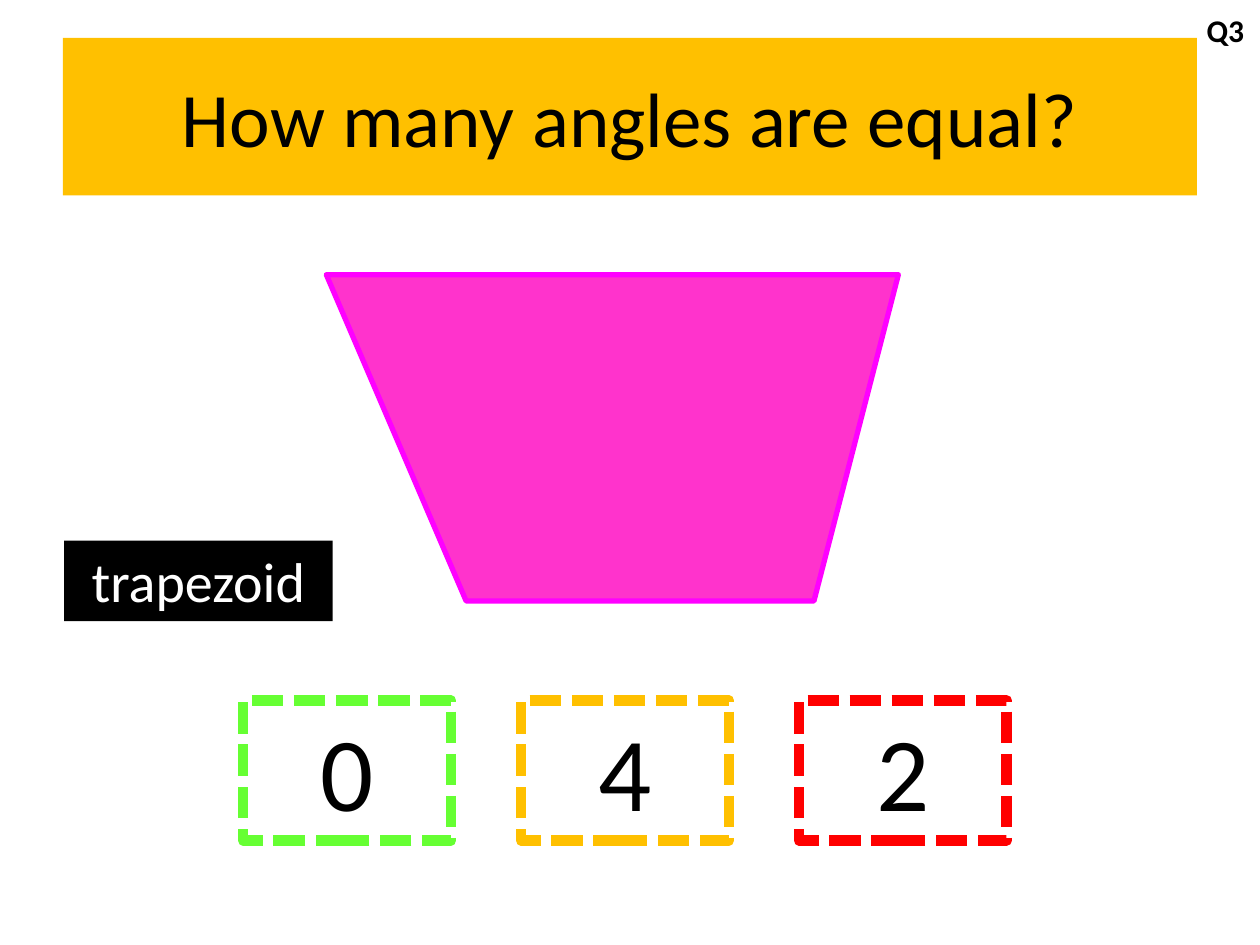
from pptx import Presentation
from pptx.dml.color import RGBColor
from pptx.enum.dml import MSO_LINE
from pptx.enum.shapes import MSO_SHAPE
from pptx.enum.text import MSO_ANCHOR, PP_ALIGN
from pptx.util import Inches, Pt

COLORS = {
    "black": "000000",
    "white": "FFFFFF",
    "amber": "FFC000",
    "pink": "FF33CC",
    "magenta": "FF00FF",
    "green": "66FF33",
    "red": "FF0000",
}


class QuizPage:
    font = "Calibri"
    unit = Inches(0.1)

    def __init__(self, deck):
        self.page = deck.slides.add_slide(deck.slide_layouts[6])

    def grid(self, *cells):
        return [round(cell * self.unit) for cell in cells]

    def color(self, name):
        return RGBColor.from_string(COLORS[name])

    def style(self, shape, fill=None, line=None, width=0, dash=None):
        shape.shadow.inherit = False
        if fill:
            shape.fill.solid()
            shape.fill.fore_color.rgb = self.color(fill)
        else:
            shape.fill.background()
        if line:
            shape.line.color.rgb = self.color(line)
            shape.line.width = Pt(width)
            shape.line.dash_style = dash
        else:
            shape.line.fill.background()

    def set_text(self, shape, text, size, color="black", bold=False, anchor=MSO_ANCHOR.TOP):
        frame = shape.text_frame
        frame.word_wrap = True
        frame.vertical_anchor = anchor
        para = frame.paragraphs[0]
        para.text = text
        para.alignment = PP_ALIGN.CENTER
        para.font.name = self.font
        para.font.size = Pt(size)
        para.font.bold = bold
        para.font.color.rgb = self.color(color)

    def label(self, area, text, size, **options):
        box = self.page.shapes.add_textbox(*self.grid(*area))
        self.set_text(box, text, size, **options)

    def panel(self, area, text, size, fill, **options):
        box = self.page.shapes.add_shape(MSO_SHAPE.RECTANGLE, *self.grid(*area))
        self.style(box, fill=fill)
        self.set_text(box, text, size, **options)

    def answer(self, area, text, line):
        box = self.page.shapes.add_shape(MSO_SHAPE.RECTANGLE, *self.grid(*area))
        self.style(box, line=line, width=6, dash=MSO_LINE.SQUARE_DOT)
        self.set_text(box, text, 60)

    def polygon(self, corners, fill, line):
        start, *others = [self.grid(*corner) for corner in corners]
        builder = self.page.shapes.build_freeform(*start)
        builder.add_line_segments(others, close=True)
        self.style(builder.convert_to_shape(), fill=fill, line=line, width=3)


def main():
    deck = Presentation()
    deck.slide_width = Inches(10)
    deck.slide_height = Inches(7.5)
    quiz = QuizPage(deck)

    quiz.panel((5, 3, 90, 12.5), "How many angles are equal?", 44, "amber",
               anchor=MSO_ANCHOR.MIDDLE)
    quiz.polygon([(71.3, 21.8), (25.9, 21.8), (37, 47.7), (64.6, 47.7)],
                 "pink", "magenta")
    answers = [("0", "green"), ("4", "amber"), ("2", "red")]
    for column, (text, line) in enumerate(answers):
        quiz.answer((19.3 + column * 22.05, 55.6, 16.5, 11.1), text, line)
    quiz.label((94.1, 0.4, 6.3, 4), "Q3", 18, bold=True)
    quiz.panel((5.1, 42.9, 21.3, 6.4), "trapezoid", 32, "black", color="white")

    deck.save("out.pptx")


if __name__ == "__main__":
    main()
